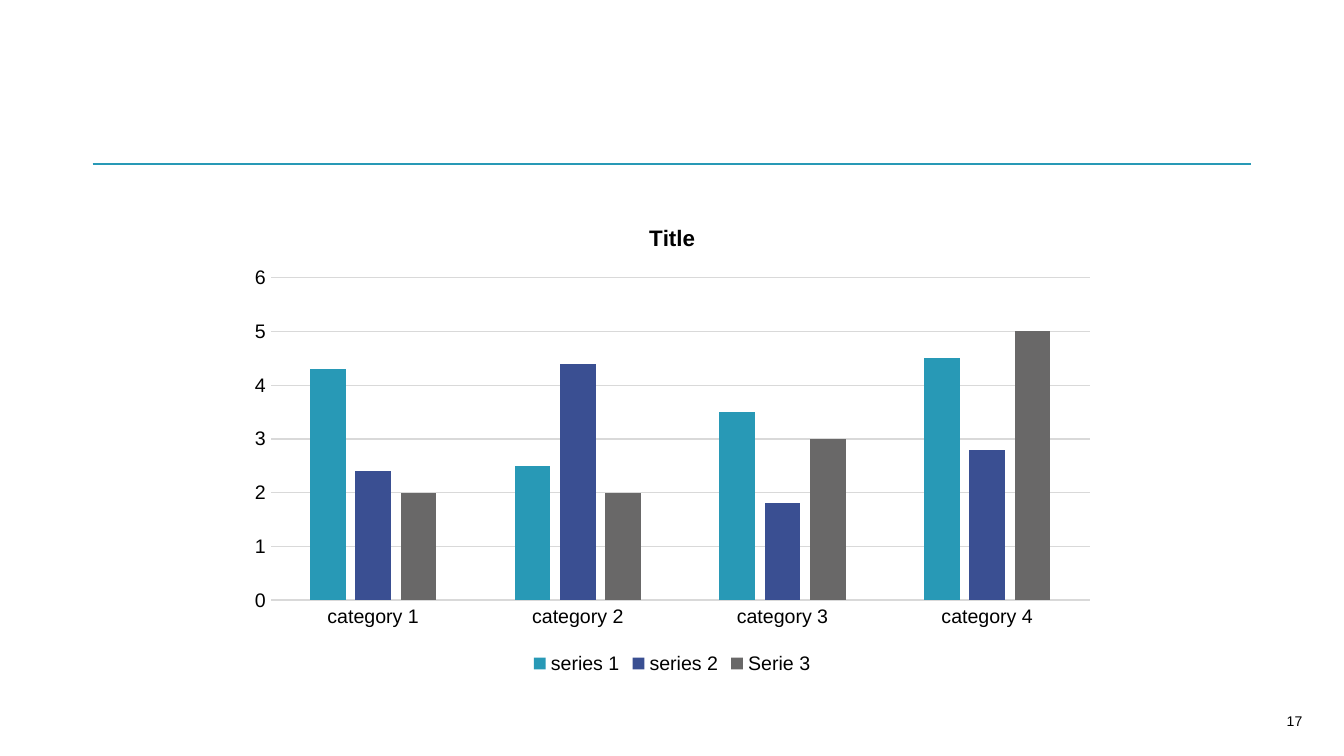
from pptx import Presentation
from pptx.chart.data import CategoryChartData as ChartData
from pptx.dml.color import RGBColor
from pptx.enum.chart import XL_CHART_TYPE as Kind, XL_LEGEND_POSITION as Side, XL_TICK_MARK as Tick
from pptx.enum.shapes import MSO_CONNECTOR as Link
from pptx.enum.text import MSO_ANCHOR as Anchor, PP_ALIGN as Align
from pptx.oxml.ns import qn
from pptx.util import Inches, Pt
from lxml import etree

TEAL = RGBColor(0x28, 0x99, 0xB6)
BLUE = RGBColor(0x3A, 0x4F, 0x92)
GRAY = RGBColor(0x69, 0x68, 0x68)
PALE = RGBColor(0xD9, 0xD9, 0xD9)
BLACK = RGBColor(0, 0, 0)
FACE = "Arial"

deck = Presentation()
wide = Inches(10)
high = wide * 9 // 16
deck.slide_width, deck.slide_height = wide, high
slide = deck.slides.add_slide(deck.slide_layouts[6])
col, row = wide / 100, high / 100


def place(left, top, width, height):
    return int(left * col), int(top * row), int(width * col), int(height * row)


def style(font, size, bold=False):
    font.name = FACE
    font.size = Pt(size)
    font.bold = bold
    font.color.rgb = BLACK


rule = slide.shapes.add_connector(Link.STRAIGHT, *place(6.9, 21.7, 93.1, 21.7))
rule.line.color.rgb = TEAL
rule.line.width = Pt(1)
etree.SubElement(rule.element.spPr, qn("a:effectLst"))

box = slide.shapes.add_textbox(*place(74.4, 92.65, 22.5, 5.33))
frame = box.text_frame
frame.word_wrap = True
frame.vertical_anchor = Anchor.MIDDLE
frame.margin_left, frame.margin_right = Inches(0.07), 0
frame.margin_top = frame.margin_bottom = Inches(0.04)
frame.text = "17"
page = frame.paragraphs[0]
page.alignment = Align.RIGHT
style(page.runs[0].font, 7.5)

sets = [
    ("series 1", (4.3, 2.5, 3.5, 4.5), TEAL),
    ("series 2", (2.4, 4.4, 1.8, 2.8), BLUE),
    ("Serie 3", (2, 2, 3, 5), GRAY),
]
data = ChartData()
data.categories = [f"category {n}" for n in range(1, 5)]
for name, vals, tint in sets:
    data.add_series(name, vals)

chart = slide.shapes.add_chart(Kind.COLUMN_CLUSTERED, *place(17.66, 26.87, 64.7, 63.1), data).chart
style(chart.font, 10.5)
chart.has_title = True
title = chart.chart_title
title.include_in_layout = False
title.text_frame.text = "Title"
style(title.text_frame.paragraphs[0].runs[0].font, 12, True)

chart.has_legend = True
chart.legend.position = Side.BOTTOM
chart.legend.include_in_layout = False
style(chart.legend.font, 10.5)

plot = chart.plots[0]
plot.gap_width = 219
plot.overlap = -27
plot.vary_by_categories = False
for bar, (name, vals, tint) in zip(plot.series, sets):
    bar.format.fill.solid()
    bar.format.fill.fore_color.rgb = tint

base, scale = chart.category_axis, chart.value_axis
for axis in (base, scale):
    axis.major_tick_mark = axis.minor_tick_mark = Tick.NONE
    style(axis.tick_labels.font, 10.5)
scale.minimum_scale, scale.maximum_scale, scale.major_unit = 0, 6, 1
scale.has_major_gridlines = True
scale.format.line.fill.background()
for line in (base.format.line, scale.major_gridlines.format.line):
    line.color.rgb = PALE
    line.width = Pt(0.75)

deck.save("out.pptx")
